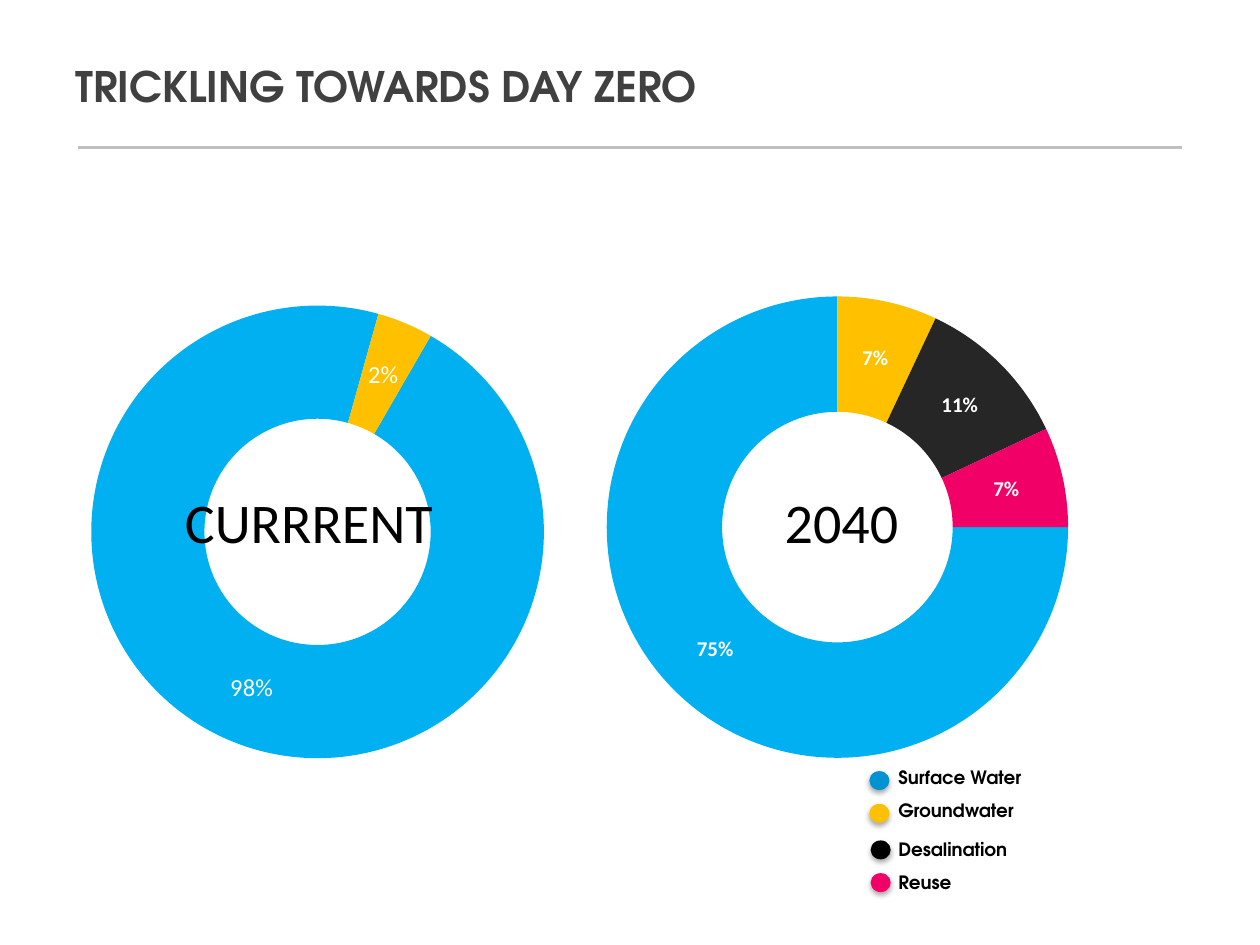
from lxml import etree
from pptx import Presentation
from pptx.chart.data import CategoryChartData
from pptx.dml.color import RGBColor
from pptx.enum import chart as charts, shapes, text
from pptx.oxml import parse_xml
from pptx.oxml.ns import nsdecls, qn
from pptx.util import Inches, Pt

HEADING_FONT = "TeX Gyre Adventor"
BODY_FONT = "Calibri"
SURFACE, GROUND, DESALINATION, REUSE = "00B0F0", "FFC000", "262626", "F00067"


def color(value):
    return RGBColor.from_string(value)


def format_font(font, size, name=BODY_FONT, fill="000000", bold=False):
    font.size, font.name, font.bold = Pt(size), name, bold
    font.color.rgb = color(fill)


def write_text(frame, lines, anchor=text.MSO_ANCHOR.TOP, align=text.PP_ALIGN.LEFT,
               margins=(0.1, 0.05), line_spacing=None, gap=0, wrap=True, **font_format):
    frame.word_wrap = wrap
    frame.auto_size = text.MSO_AUTO_SIZE.NONE
    frame.vertical_anchor = anchor
    frame.margin_left = frame.margin_right = Inches(margins[0])
    frame.margin_top = frame.margin_bottom = Inches(margins[1])
    for index, line in enumerate(lines):
        paragraph = frame.paragraphs[0] if index == 0 else frame.add_paragraph()
        paragraph.alignment = align
        if line_spacing:
            paragraph.line_spacing = line_spacing
        if index and gap:
            paragraph.space_before = Pt(gap)
        run = paragraph.add_run()
        run.text = line
        format_font(run.font, **font_format)


def add_text(slide, box, lines, **options):
    shape = slide.shapes.add_textbox(*map(Inches, box))
    write_text(shape.text_frame, lines, **options)


def add_header(slide, box, title):
    shape = slide.shapes.title
    shape.left, shape.top, shape.width, shape.height = map(Inches, box)
    write_text(shape.text_frame, [title], anchor=text.MSO_ANCHOR.MIDDLE,
               size=24, name=HEADING_FONT, fill="404040", bold=True)
    # Rule under the title
    left, top, width, height = box
    y = Inches(top + height + 0.11)
    rule = slide.shapes.add_connector(shapes.MSO_CONNECTOR.STRAIGHT,
                                      Inches(left + 0.12), y, Inches(left + width - 0.12), y)
    rule.line.color.rgb = color("BFBFBF")
    rule.line.width = Pt(2)
    etree.SubElement(rule._element.spPr, qn("a:effectLst"))


def set_doughnut_geometry(chart, start_angle):
    space = chart._chartSpace
    space.find(".//" + qn("c:firstSliceAng")).set("val", str(start_angle))
    space.find(".//" + qn("c:holeSize")).set("val", "70")
    plot_area = space.find(".//" + qn("c:plotArea"))
    for layout in plot_area.findall(qn("c:layout")):
        plot_area.remove(layout)
    settings = (("layoutTarget", "inner"), ("xMode", "edge"), ("yMode", "edge"),
                ("x", 0.119), ("y", 0.18), ("w", 0.771), ("h", 0.728))
    items = "".join(f'<c:{tag} val="{value}"/>' for tag, value in settings)
    plot_area.insert(0, parse_xml(
        f'<c:layout {nsdecls("c")}><c:manualLayout>{items}</c:manualLayout></c:layout>'))


def add_doughnut(slide, box, values, fills, start_angle, label_size, label_texts=()):
    data = CategoryChartData()
    data.categories = [str(number + 1) for number in range(len(values))]
    data.add_series("Series 1", values)
    chart = slide.shapes.add_chart(charts.XL_CHART_TYPE.DOUGHNUT,
                                   *map(Inches, box), data).chart
    chart.has_legend = chart.has_title = False
    format_font(chart.font, label_size)
    set_doughnut_geometry(chart, start_angle)

    plot = chart.plots[0]
    plot.vary_by_categories = True
    series = plot.series[0]
    for index, fill in enumerate(fills):
        point = series.points[index]
        point.format.fill.solid()
        point.format.fill.fore_color.rgb = color(fill)
        point.format.line.fill.background()

    # Percentages on the ring
    labels = series.data_labels
    labels.show_percentage, labels.show_value = True, False
    labels.number_format, labels.number_format_is_linked = "0%", False
    format_font(labels.font, label_size, fill="FFFFFF", bold=True)
    for index, label in enumerate(label_texts):
        paragraph = series.points[index].data_label.text_frame.paragraphs[0]
        run = paragraph.add_run()
        run.text = label
        format_font(run.font, label_size, fill="FFFFFF")


def add_legend(slide, box, dot_left, dot_top, entries):
    add_text(slide, box, [name for name, _ in entries], margins=(0.07, 0.04),
             line_spacing=0.9, gap=7.5, size=10.5, name=HEADING_FONT, bold=True)
    for index, (_, fill) in enumerate(entries):
        dot = slide.shapes.add_shape(shapes.MSO_SHAPE.OVAL, Inches(dot_left),
                                     Inches(dot_top + 0.26 * index), Inches(0.16), Inches(0.15))
        dot.fill.solid()
        dot.fill.fore_color.rgb = color(fill)
        dot.line.fill.background()
        dot._element.spPr.append(parse_xml(
            f'<a:effectLst {nsdecls("a")}><a:outerShdw blurRad="{Pt(3.1)}" dist="{Pt(1.8)}" '
            'dir="5400000" rotWithShape="0"><a:srgbClr val="000000"><a:alpha val="35000"/>'
            '</a:srgbClr></a:outerShdw></a:effectLst>'))


def main():
    presentation = Presentation()
    presentation.slide_width, presentation.slide_height = Inches(10), Inches(7.5)
    slide = presentation.slides.add_slide(presentation.slide_layouts[5])

    add_header(slide, (0.5, 0.3, 9, 0.76), "TRICKLING TOWARDS DAY ZERO")

    # Legend
    add_legend(slide, (7.06, 6.63, 2.22, 0.69), 6.91, 6.67,
               [("Desalination", "000000"), ("Reuse", REUSE)])
    add_legend(slide, (7.06, 6.06, 2.22, 0.44), 6.9, 6.12,
               [("Surface Water", "0092D2"), ("Groundwater", GROUND)])

    # Water sources now and in 2040
    add_doughnut(slide, (0.17, 1.35, 4.66, 5.28), (96, 4), (SURFACE, GROUND),
                 start_angle=30, label_size=14, label_texts=("98%", "2%"))
    add_doughnut(slide, (4.25, 1.35, 4.75, 5.21), (75, 7, 11, 7),
                 (SURFACE, GROUND, DESALINATION, REUSE), start_angle=90, label_size=12)

    # Names in the ring centres
    add_text(slide, (1.37, 3.82, 2.23, 0.64), ["CURRRENT"], size=32, wrap=False)
    add_text(slide, (6.13, 3.82, 1.16, 0.64), ["2040"], size=32, wrap=False)

    presentation.save("out.pptx")


if __name__ == "__main__":
    main()
